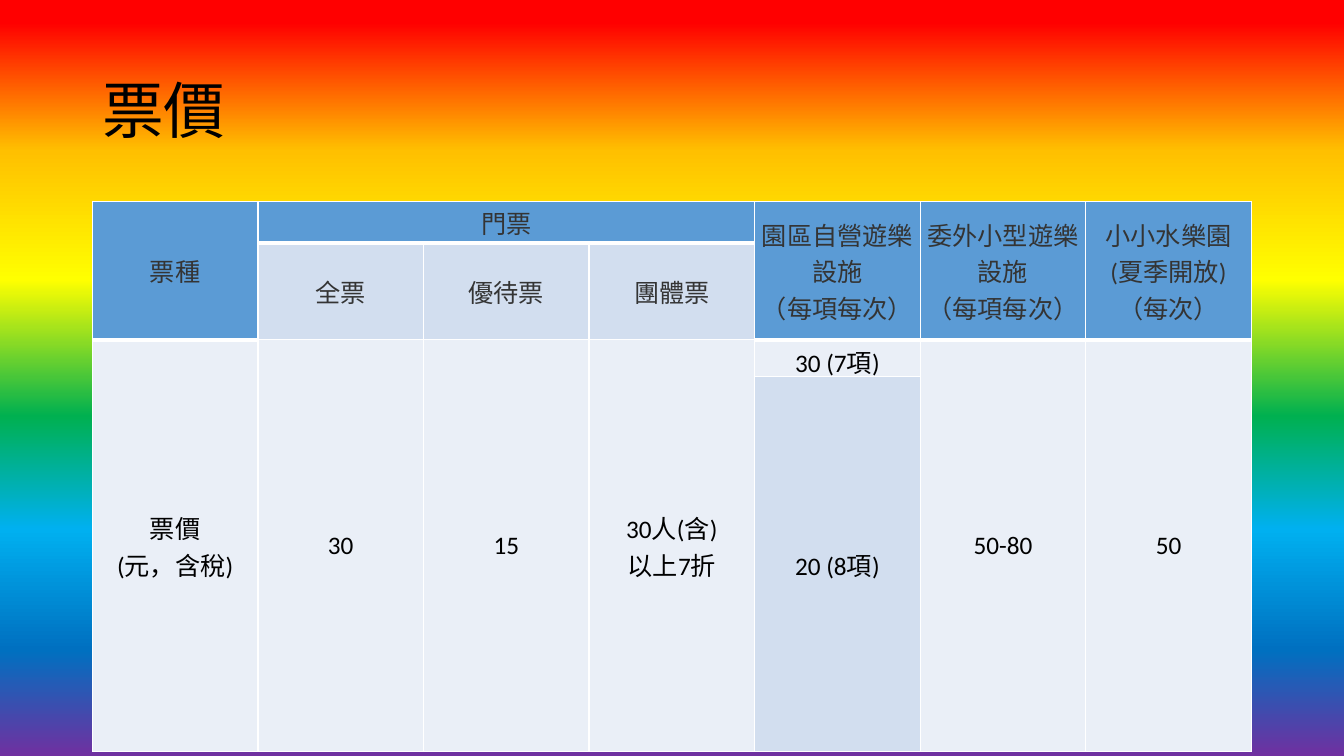
from pptx import Presentation
from pptx.dml.color import RGBColor
from pptx.enum.text import MSO_ANCHOR, PP_ALIGN
from pptx.oxml.ns import qn
from pptx.util import Pt
from lxml import etree

MID = MSO_ANCHOR.MIDDLE
CENTER = PP_ALIGN.CENTER
CJK = "Noto Sans CJK JP"
COLORS = {
    "head": "5B9BD5", "band": "D2DEEF", "pale": "EAEFF7",
    "ink": "000000", "gray": "343434", "line": "FFFFFF",
}
RAINBOW = [
    (3, "FF0000"), (20, "FFC000"), (37, "FFFF00"), (55, "00B050"),
    (70, "00B0F0"), (86, "0070C0"), (100, "7030A0"),
]


def add_run(para, text, size, font, color):
    run = para.add_run()
    run.text = text
    run.font.size = Pt(size)
    run.font.name = font
    run.font.color.rgb = RGBColor.from_string(COLORS[color])
    east = etree.SubElement(run.font._element, qn("a:ea"))
    east.set("typeface", CJK)


def add_edges(cell, low):
    """Draw white borders of 1 pt, with the bottom one low points wide."""
    props = cell._tc.get_or_add_tcPr()
    for i, side in enumerate("LRTB"):
        edge = etree.Element(qn("a:ln" + side))
        edge.set("w", str(Pt(low if side == "B" else 1)))
        fill = etree.SubElement(edge, qn("a:solidFill"))
        etree.SubElement(fill, qn("a:srgbClr")).set("val", COLORS["line"])
        props.insert(i, edge)


prs = Presentation()
prs.slide_width, prs.slide_height = Pt(960), Pt(540)
slide = prs.slides.add_slide(prs.slide_layouts[6])

# Rainbow background, running from top to bottom
back = slide.background.fill
back.gradient()
back.gradient_angle = 270
stops = slide.element.find(".//" + qn("a:gsLst"))
for stop in list(stops):
    stops.remove(stop)
for pos, color in RAINBOW:
    stop = etree.SubElement(stops, qn("a:gs"))
    stop.set("pos", str(pos * 1000))
    etree.SubElement(stop, qn("a:srgbClr")).set("val", color)

# Title
title = slide.shapes.add_textbox(Pt(66), Pt(28.75), Pt(828), Pt(104.4))
frame = title.text_frame
frame.word_wrap = True
frame.vertical_anchor = MID
para = frame.paragraphs[0]
para.line_spacing = 0.9
add_run(para, "票價", 44, CJK, "ink")

# Price table: row, column, rows spanned, columns spanned, text, fill
CELLS = [
    (0, 0, 2, 1, "票種", "head"),
    (0, 1, 1, 3, "門票", "head"),
    (0, 4, 2, 1, "園區自營遊樂設施\n（每項每次）", "head"),
    (0, 5, 2, 1, "委外小型遊樂設施\n（每項每次）", "head"),
    (0, 6, 2, 1, "小小水樂園\n(夏季開放)\n（每次）", "head"),
    (1, 1, 1, 1, "全票", "band"),
    (1, 2, 1, 1, "優待票", "band"),
    (1, 3, 1, 1, "團體票", "band"),
    (2, 0, 2, 1, "票價\n(元，含稅)", "pale"),
    (2, 1, 2, 1, "30", "pale"),
    (2, 2, 2, 1, "15", "pale"),
    (2, 3, 2, 1, "30人(含)\n以上7折", "pale"),
    (2, 4, 1, 1, "30 (7項)", "pale"),
    (2, 5, 2, 1, "50-80", "pale"),
    (2, 6, 2, 1, "50", "pale"),
    (3, 4, 1, 1, "20 (8項)", "band"),
]
HEIGHTS = [29.5, 29.5, 24, 268]

table = slide.shapes.add_table(
    4, 7, Pt(66), Pt(144), Pt(828), Pt(sum(HEIGHTS))).table
table.first_row = table.horz_banding = False
for col in table.columns:
    col.width = Pt(828 / 7)
for row, high in zip(table.rows, HEIGHTS):
    row.height = Pt(high)

for r, c, down, wide, text, fill in CELLS:
    cell = table.cell(r, c)
    if down * wide > 1:
        cell.merge(table.cell(r + down - 1, c + wide - 1))
    cell.fill.solid()
    cell.fill.fore_color.rgb = RGBColor.from_string(COLORS[fill])
    cell.vertical_anchor = MID
    cell.margin_left = cell.margin_right = Pt(2.25)
    cell.margin_top = cell.margin_bottom = Pt(2.25)
    add_edges(cell, 3 if r == 0 else 1)
    para = cell.text_frame.paragraphs[0]
    para.alignment = CENTER
    for i, part in enumerate(text.split("\n")):
        if i:
            para.add_line_break()
        add_run(para, part, 18, "Calibri", "gray" if r < 2 else "ink")

prs.save("out.pptx")
